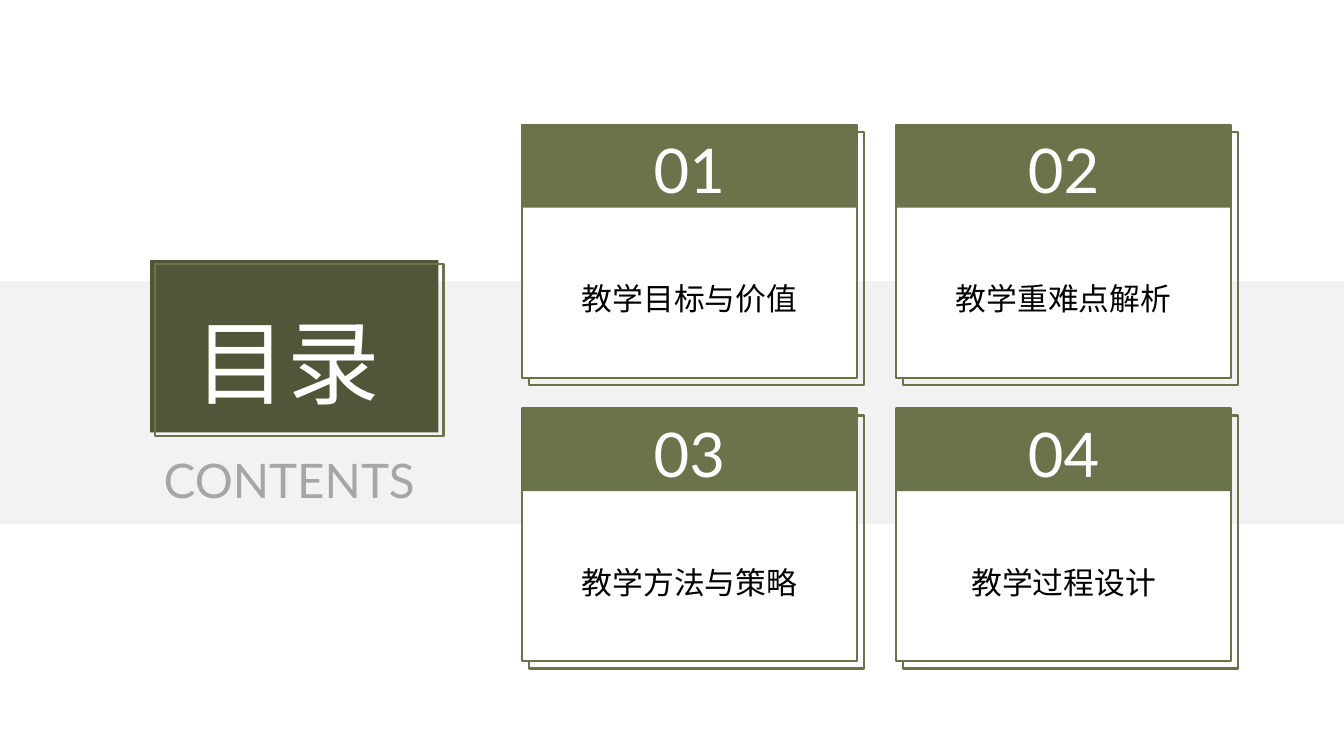
from pptx import Presentation
from pptx.dml.color import RGBColor
from pptx.enum.shapes import MSO_SHAPE
from pptx.enum.text import MSO_ANCHOR, MSO_AUTO_SIZE, PP_ALIGN
from pptx.util import Inches, Pt

RECT = MSO_SHAPE.RECTANGLE
TOP, MIDDLE, BOTTOM = MSO_ANCHOR.TOP, MSO_ANCHOR.MIDDLE, MSO_ANCHOR.BOTTOM
CENTER = PP_ALIGN.CENTER
FIXED = MSO_AUTO_SIZE.NONE

WHITE = RGBColor(0xFF, 0xFF, 0xFF)
BLACK = RGBColor(0x00, 0x00, 0x00)
PALE = RGBColor(0xF2, 0xF2, 0xF2)
GREY = RGBColor(0xA6, 0xA6, 0xA6)
OLIVE = RGBColor(0x6A, 0x73, 0x49)
DARK = RGBColor(0x50, 0x56, 0x37)

COLS, ROWS = 160, 90
TOPICS = ("教学目标与价值", "教学重难点解析", "教学方法与策略", "教学过程设计")


class Deck:
    """Draws on one slide, with lengths in columns and rows of the grid."""
    font = "Lato"
    space = 1.3
    border = Pt(1.5)

    def __init__(self):
        self.show = Presentation()
        self.show.slide_width = Inches(13.33)
        self.show.slide_height = Inches(7.5)
        self.slide = self.show.slides.add_slide(self.show.slide_layouts[5])

    def place(self, x, y, w, h):
        """Turn grid units into slide lengths."""
        col = self.show.slide_width / COLS
        row = self.show.slide_height / ROWS
        return round(x * col), round(y * row), round(w * col), round(h * row)

    def box(self, x, y, w, h, fill=None, line=None):
        shape = self.slide.shapes.add_shape(RECT, *self.place(x, y, w, h))
        shape.shadow.inherit = False
        if fill is None:
            shape.fill.background()
        else:
            shape.fill.solid()
            shape.fill.fore_color.rgb = fill
        if line is None:
            shape.line.fill.background()
        else:
            shape.line.color.rgb = line
            shape.line.width = self.border

    def style(self, shape, text, size, color, anchor):
        frame = shape.text_frame
        frame.text = text
        frame.word_wrap = True
        frame.auto_size = FIXED
        frame.vertical_anchor = anchor
        frame.margin_left = frame.margin_right = 0
        frame.margin_top = frame.margin_bottom = 0
        para = frame.paragraphs[0]
        para.alignment = CENTER
        para.line_spacing = self.space
        font = para.runs[0].font
        font.name, font.size = self.font, Pt(size)
        font.color.rgb = color

    def text(self, x, y, w, h, text, size, color, anchor=TOP):
        shape = self.slide.shapes.add_textbox(*self.place(x, y, w, h))
        self.style(shape, text, size, color, anchor)

    def title(self, x, y, w, h, text, size, color):
        """Fill the title placeholder and bring it to the front."""
        shape = self.slide.shapes.title
        shape.left, shape.top, shape.width, shape.height = self.place(x, y, w, h)
        self.style(shape, text, size, color, TOP)
        self.slide.shapes.element.append(shape.element)

    def card(self, x, y, number, topic):
        wide, high, shift = 39.84, 30.12, 0.84
        self.box(x + shift, y + shift, wide, high, line=OLIVE)
        self.box(x, y, wide, high, WHITE, OLIVE)
        self.box(x, y, wide, 9.84, OLIVE)
        self.text(x + 11.64, y - 1.65, 16.56, 11.28, number, 44, WHITE, BOTTOM)
        self.text(x + 1.26, y + 12.48, 37.32, 15, topic, 22, BLACK, MIDDLE)


def main():
    deck = Deck()
    deck.box(0, 33.48, COLS, 28.92, PALE)
    deck.box(17.88, 30.96, 34.32, 20.52, DARK)
    deck.box(18.48, 31.44, 34.32, 20.52, line=OLIVE)
    deck.title(17.64, 32.4, 33.12, 15, "目录", 66, WHITE)
    deck.text(15.48, 51.6, 37.92, 9, "CONTENTS", 34, GREY)
    for i, topic in enumerate(TOPICS):
        row, col = divmod(i, 2)
        deck.card(62.16 + 44.54 * col, 14.88 + 33.75 * row, f"{i + 1:02}", topic)
    deck.show.save("out.pptx")


if __name__ == "__main__":
    main()
